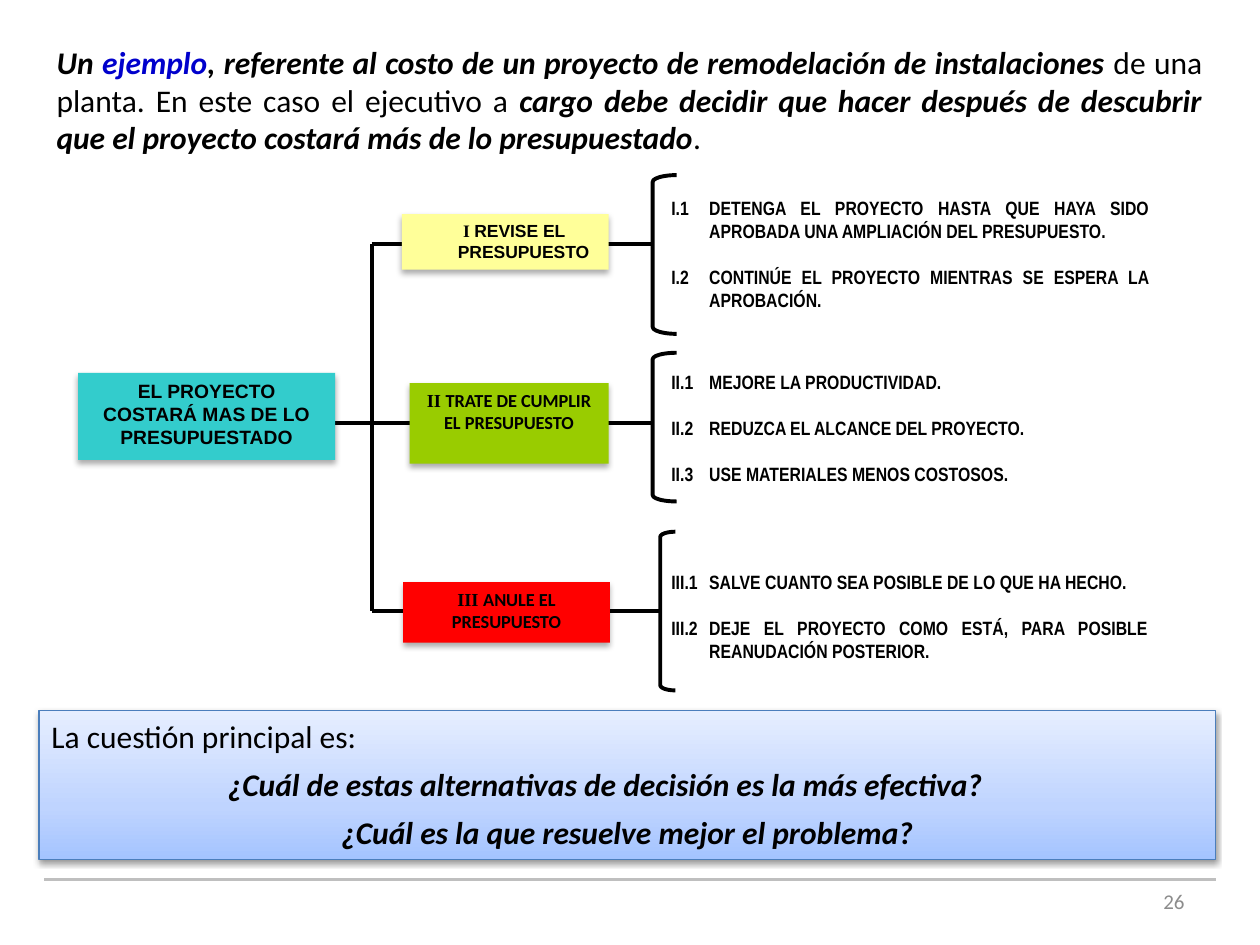
from dataclasses import dataclass

from lxml.etree import SubElement
from pptx import Presentation
from pptx.dml.color import RGBColor
from pptx.enum.shapes import MSO_CONNECTOR, MSO_SHAPE as Preset
from pptx.enum.text import MSO_ANCHOR as Anchor, PP_ALIGN as Align
from pptx.oxml import parse_xml
from pptx.oxml.ns import nsdecls, qn
from pptx.util import Inches, Pt


@dataclass(frozen=True)
class Theme:
    black: str = "000000"
    accent: str = "0000CC"
    number: str = "8C8C8C"
    rule: str = "BFBFBF"
    problem: str = "33CCCC"
    panel_line: str = "4B7EBC"
    panel_stops: tuple = ((0, "A4C4FF"), (35, "BFD4FF"), (100, "E6EEFF"))
    body: str = "Calibri"
    label: str = "Arial"
    numeral: str = "Times New Roman"
    narrow: str = "Arial Narrow"
    body_size: float = 18
    label_size: float = 11
    number_size: float = 12
    tree_width: float = 2.25


THEME = Theme()
STRONG = dict(bold=True, italic=True)

# Content: runs are (text, format) pairs
INTRO = [
    ("Un ", STRONG),
    ("ejemplo", dict(STRONG, color=THEME.accent)),
    (", referente al costo de un proyecto de remodelación de instalaciones", STRONG),
    (" de una planta. En este caso el ejecutivo a ", {}),
    ("cargo debe decidir que hacer después de descubrir que el proyecto "
     "costará más de lo presupuestado", STRONG),
    (".", {}),
]
PROBLEM = "EL PROYECTO COSTARÁ MAS DE LO PRESUPUESTADO"
ALTERNATIVES = [
    dict(numeral="I", label="REVISE EL PRESUPUESTO", font=THEME.label, size=10,
         fill="FFFF99", box=(3.19, 1.7, 1.64, 0.44), margin=0.29, indent=-0.15,
         bracket=(5.18, 1.39, 0.19, 1.26), curve=0.283, options_box=(5.23, 1.5, 3.99, 1.03),
         options=[("I.1", "DETENGA EL PROYECTO HASTA QUE HAYA SIDO "
                          "APROBADA UNA AMPLIACIÓN DEL PRESUPUESTO."),
                  ("I.2", "CONTINÚE EL PROYECTO MIENTRAS SE ESPERA LA APROBACIÓN.")]),
    dict(numeral="II", label="TRATE DE CUMPLIR EL PRESUPUESTO", font=THEME.body, size=10.5,
         fill="99CC00", box=(3.25, 3.04, 1.58, 0.64), margin=0, indent=0,
         bracket=(5.18, 2.8, 0.19, 1.18), curve=0.265, options_box=(5.23, 2.88, 3.99, 1.03),
         options=[("II.1", "MEJORE LA PRODUCTIVIDAD."),
                  ("II.2", "REDUZCA EL ALCANCE DEL PROYECTO."),
                  ("II.3", "USE MATERIALES MENOS COSTOSOS.")]),
    dict(numeral="III", label="ANULE EL PRESUPUESTO", font=THEME.body, size=10.5,
         fill="FF0000", box=(3.2, 4.62, 1.64, 0.48), margin=0, indent=0,
         bracket=(5.24, 4.22, 0.12, 1.26), curve=0.342, options_box=(5.23, 4.47, 3.98, 0.84),
         options=[("III.1", "SALVE CUANTO SEA POSIBLE DE LO QUE HA HECHO."),
                  ("III.2", "DEJE EL PROYECTO COMO ESTÁ, PARA POSIBLE "
                            "REANUDACIÓN POSTERIOR.")]),
]
QUESTION_TITLE = "La cuestión principal es:"
QUESTIONS = [
    ("¿Cuál de estas alternativas de decisión es la más efectiva?", Align.LEFT, 1.4),
    ("¿Cuál es la que resuelve mejor el problema?", Align.CENTER, 0),
]
PAGE_NUMBER = "26"

# Tree geometry
TRUNK_X = 2.95
BRANCH_Y = (1.94, 3.36, 4.85)
OPTION_INDENT = 0.3


def place(box):
    return [Inches(value) for value in box]


def write(paragraph, runs, font=THEME.body, size=THEME.body_size, color=THEME.black,
          bold=False, italic=False, align=Align.LEFT, before=0, margin=0, indent=0):
    """Write text, or (text, format) pairs, into a paragraph."""
    paragraph.alignment = align
    if before:
        paragraph.space_before = Pt(before)
    if margin or indent:
        properties = paragraph._p.get_or_add_pPr()
        properties.set("marL", str(Inches(margin)))
        properties.set("indent", str(Inches(indent)))
    base = dict(font=font, size=size, color=color, bold=bold, italic=italic)
    for text, changes in ([(runs, {})] if isinstance(runs, str) else runs):
        look = {**base, **changes}
        run = paragraph.add_run()
        run.text = text
        run.font.name, run.font.size = look["font"], Pt(look["size"])
        run.font.bold, run.font.italic = look["bold"], look["italic"]
        run.font.color.rgb = RGBColor.from_string(look["color"])


def frame_of(shape, anchor=Anchor.TOP):
    frame = shape.text_frame
    frame.word_wrap = True
    frame.vertical_anchor = anchor
    return frame


def next_paragraph(frame, index):
    return frame.add_paragraph() if index else frame.paragraphs[0]


def add_text_box(slide, box, anchor=Anchor.TOP):
    return frame_of(slide.shapes.add_textbox(*place(box)), anchor)


def add_line(slide, start, end, color=THEME.black, width=THEME.tree_width):
    line = slide.shapes.add_connector(MSO_CONNECTOR.STRAIGHT, *place(start + end))
    line.line.color.rgb = RGBColor.from_string(color)
    line.line.width = Pt(width)
    SubElement(line._element.spPr, qn("a:effectLst"))


def add_box(slide, box, fill=None, alpha=32, blur=3.5, distance=2.2):
    """Add a borderless rectangle with a soft shadow below it."""
    shape = slide.shapes.add_shape(Preset.RECTANGLE, *place(box))
    shape.line.fill.background()
    if fill:
        shape.fill.solid()
        shape.fill.fore_color.rgb = RGBColor.from_string(fill)
    shape.shadow.inherit = False
    effects = shape._element.spPr.find(qn("a:effectLst"))
    shadow = SubElement(effects, qn("a:outerShdw"), blurRad=str(Pt(blur)),
                        dist=str(Pt(distance)), dir="5400000", rotWithShape="0")
    color = SubElement(shadow, qn("a:srgbClr"), val=THEME.black)
    SubElement(color, qn("a:alpha"), val=str(alpha * 1000))
    return shape


def add_bracket(slide, box, curve):
    bracket = slide.shapes.add_shape(Preset.LEFT_BRACKET, *place(box))
    bracket.adjustments[0] = curve
    bracket.fill.background()
    bracket.line.color.rgb = RGBColor.from_string(THEME.black)
    bracket.line.width = Pt(THEME.tree_width)
    bracket.shadow.inherit = False


def add_alternative(slide, item):
    frame = frame_of(add_box(slide, item["box"], item["fill"]))
    runs = [(item["numeral"] + " ", dict(font=THEME.numeral)), (item["label"], {})]
    write(frame.paragraphs[0], runs, font=item["font"], size=item["size"], bold=True,
          align=Align.CENTER, margin=item["margin"], indent=item["indent"])
    add_bracket(slide, item["bracket"], item["curve"])
    options = add_text_box(slide, item["options_box"], Anchor.MIDDLE)
    for index, option in enumerate(item["options"]):
        write(next_paragraph(options, index), "\t".join(option), font=THEME.narrow,
              size=THEME.label_size, bold=True, align=Align.JUSTIFY,
              before=13 if index else 0, margin=OPTION_INDENT, indent=-OPTION_INDENT)


def add_question_panel(slide):
    panel = add_box(slide, (0.31, 5.64, 9.34, 1.18), alpha=38, blur=3.1, distance=1.6)
    panel.line.color.rgb = RGBColor.from_string(THEME.panel_line)
    panel.line.width = Pt(0.75)
    stops = "".join(f'<a:gs pos="{position * 1000}"><a:srgbClr val="{color}"/></a:gs>'
                    for position, color in THEME.panel_stops)
    gradient = parse_xml(f'<a:gradFill {nsdecls("a")} rotWithShape="1"><a:gsLst>{stops}'
                         '</a:gsLst><a:lin ang="16200000" scaled="0"/></a:gradFill>')
    panel._element.spPr.find(qn("a:prstGeom")).addnext(gradient)
    frame = frame_of(panel)
    write(frame.paragraphs[0], QUESTION_TITLE)
    for text, align, margin in QUESTIONS:
        write(frame.add_paragraph(), text, align=align, margin=margin, before=6, **STRONG)


def main():
    presentation = Presentation()
    presentation.slide_width, presentation.slide_height = Inches(10), Inches(7.5)
    slide = presentation.slides.add_slide(presentation.slide_layouts[6])

    # Footer rule and tree lines, behind the boxes
    add_line(slide, (0.35, 6.98), (9.65, 6.98), THEME.rule, 2)
    add_line(slide, (TRUNK_X, BRANCH_Y[0]), (TRUNK_X, BRANCH_Y[-1]))
    starts = (TRUNK_X, 2.58, TRUNK_X)
    for start, y, item in zip(starts, BRANCH_Y, ALTERNATIVES):
        add_line(slide, (start, y), (item["bracket"][0], y))

    # Problem, alternatives and their options
    problem = frame_of(add_box(slide, (0.62, 2.96, 2.04, 0.69), THEME.problem))
    write(problem.paragraphs[0], PROBLEM, font=THEME.label, size=THEME.label_size,
          bold=True, align=Align.CENTER)
    for item in ALTERNATIVES:
        add_alternative(slide, item)

    # Question panel, introduction and page number
    add_question_panel(slide)
    intro = add_text_box(slide, (0.35, 0.29, 9.29, 1.01))
    write(intro.paragraphs[0], INTRO, align=Align.JUSTIFY)
    number = add_text_box(slide, (7.17, 6.95, 2.33, 0.4), Anchor.MIDDLE)
    write(number.paragraphs[0], PAGE_NUMBER, size=THEME.number_size,
          color=THEME.number, align=Align.RIGHT)

    presentation.save("out.pptx")


if __name__ == "__main__":
    main()
